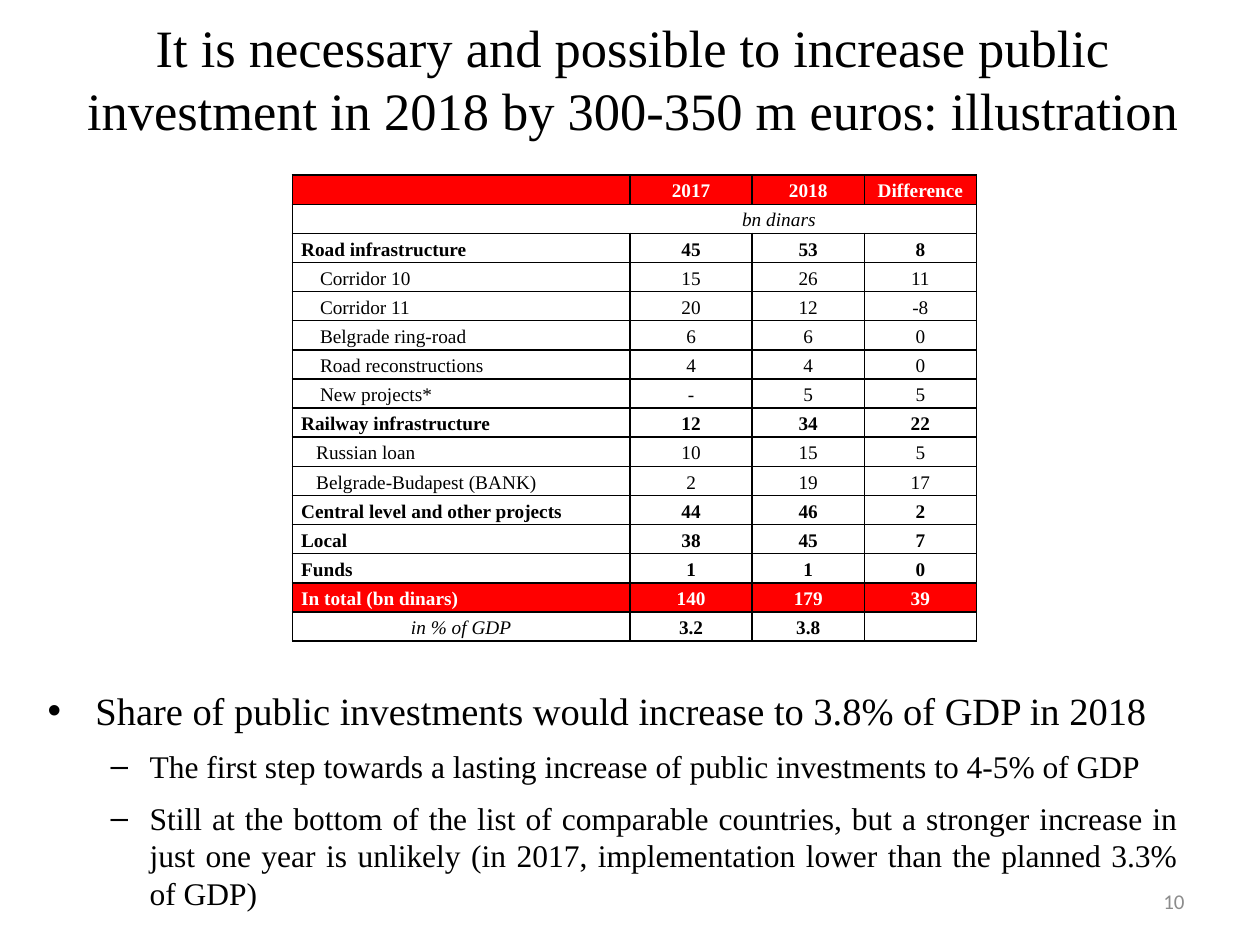
from dataclasses import dataclass

from lxml import etree
from pptx import Presentation
from pptx.dml.color import RGBColor
from pptx.enum.text import MSO_ANCHOR, MSO_AUTO_SIZE, PP_ALIGN
from pptx.oxml.ns import qn
from pptx.util import Inches, Pt

LEFT, CENTER, RIGHT, JUST = PP_ALIGN.LEFT, PP_ALIGN.CENTER, PP_ALIGN.RIGHT, PP_ALIGN.JUSTIFY
MIDDLE, TOP = MSO_ANCHOR.MIDDLE, MSO_ANCHOR.TOP
NO_FIT = MSO_AUTO_SIZE.NONE


@dataclass(frozen=True)
class Theme:
    serif: str = "Times New Roman"
    sans: str = "Calibri"
    ink: str = "000000"
    paper: str = "FFFFFF"
    accent: str = "FF0000"
    muted: str = "8C8C8C"
    title: int = 30
    lead: int = 22
    point: int = 18
    page: int = 12
    cell: int = 11


THEME = Theme()

COLS = [2.68, 0.97, 0.89, 0.89]
ROWS = [
    ("head", "", "2017", "2018", "Difference"),
    ("unit", "bn dinars", "", "", ""),
    ("group", "Road infrastructure", "45", "53", "8"),
    ("road", "Corridor 10", "15", "26", "11"),
    ("road", "Corridor 11", "20", "12", "-8"),
    ("road", "Belgrade ring-road", "6", "6", "0"),
    ("road", "Road reconstructions", "4", "4", "0"),
    ("road", "New projects*", "-", "5", "5"),
    ("group", "Railway infrastructure", "12", "34", "22"),
    ("rail", "Russian loan", "10", "15", "5"),
    ("rail", "Belgrade-Budapest (BANK)", "2", "19", "17"),
    ("group", "Central level and other projects", "44", "46", "2"),
    ("group", "Local", "38", "45", "7"),
    ("group", "Funds", "1", "1", "0"),
    ("head", "In total (bn dinars)", "140", "179", "39"),
    ("share", "in % of GDP", "3.2", "3.8", ""),
]
INDENT = {"unit": 3.5, "road": 0.15, "rail": 0.12}
POINTS = [
    (0, "Share of public investments would increase to 3.8% of GDP in 2018"),
    (1, "The first step towards a lasting increase of public investments to 4-5% of GDP"),
    (1, "Still at the bottom of the list of comparable countries, but a stronger increase in "
        "just one year is unlikely (in 2017, implementation lower than the planned 3.3% of GDP)"),
]
LEVELS = [("•", 0.38, -0.38, THEME.lead), ("–", 0.81, -0.31, THEME.point)]


def add_run(para, text, size, color=THEME.ink, face=THEME.serif, bold=False, italic=False):
    run = para.add_run()
    run.text = text
    font = run.font
    font.name, font.size, font.bold, font.italic = face, Pt(size), bold, italic
    font.color.rgb = RGBColor.from_string(color)


def set_frame(frame, anchor):
    frame.word_wrap = True
    frame.auto_size = NO_FIT
    frame.vertical_anchor = anchor
    return frame.paragraphs[0]


def set_indent(para, left, first=0):
    props = para._p.get_or_add_pPr()
    props.set("marL", str(Inches(left)))
    props.set("indent", str(Inches(first)))
    return props


def set_border(cell):
    props = cell._tc.get_or_add_tcPr()
    for spot, side in enumerate(("lnL", "lnR", "lnT", "lnB")):
        line = etree.Element(qn(f"a:{side}"), w=str(Pt(1)))
        fill = etree.SubElement(line, qn("a:solidFill"))
        etree.SubElement(fill, qn("a:srgbClr"), val=THEME.ink)
        props.insert(spot, line)


def fill_cell(cell, kind, col, text):
    head = kind == "head"
    cell.fill.solid()
    cell.fill.fore_color.rgb = RGBColor.from_string(THEME.accent if head else THEME.paper)
    set_border(cell)
    cell.margin_left = cell.margin_right = Inches(0.07)
    cell.margin_top = cell.margin_bottom = 0
    cell.vertical_anchor = MIDDLE
    para = cell.text_frame.paragraphs[0]
    para.line_spacing = 1.15
    para.alignment = CENTER if col or kind == "share" else LEFT
    if not text:
        etree.SubElement(para._p, qn("a:endParaRPr"), sz=str(THEME.cell * 100))
        return
    if col == 0 and kind in INDENT:
        set_indent(para, INDENT[kind])
    label = col == 0 and kind in ("unit", "share")
    bold = kind in ("head", "group", "share") and not label
    add_run(para, text, THEME.cell, THEME.paper if head else THEME.ink, bold=bold, italic=label)


def add_title(slide, x, y, w, h):
    title = slide.shapes.title
    title.left, title.top, title.width, title.height = map(Inches, (x, y, w, h))
    para = set_frame(title.text_frame, MIDDLE)
    para.alignment = CENTER
    add_run(para, "It is necessary and possible to increase public investment in 2018 "
                  "by 300-350 m euros: illustration", THEME.title)


def add_grid(slide, x, y, w, h):
    box = map(Inches, (x, y, w, h))
    grid = slide.shapes.add_table(len(ROWS), len(COLS), *box).table
    for col, part in zip(grid.columns, COLS):
        col.width = Inches(w * part / sum(COLS))
    for r, (kind, *texts) in enumerate(ROWS):
        grid.rows[r].height = Inches(h / len(ROWS))
        for c, text in enumerate(texts):
            fill_cell(grid.cell(r, c), kind, c, text)
        if kind == "unit":
            grid.cell(r, 0).merge(grid.cell(r, len(COLS) - 1))


def add_points(slide, x, y, w, h):
    frame = slide.shapes.add_textbox(*map(Inches, (x, y, w, h))).text_frame
    para = set_frame(frame, TOP)
    for i, (level, text) in enumerate(POINTS):
        if i:
            para = frame.add_paragraph()
        mark, left, first, size = LEVELS[level]
        para.level = level
        para.alignment = JUST
        para.space_before = para.space_after = Pt(4)
        props = set_indent(para, left, first)
        etree.SubElement(props, qn("a:buFont"), typeface="Arial")
        etree.SubElement(props, qn("a:buChar"), char=mark)
        add_run(para, text, size)


def add_page(slide, x, y, w, h):
    frame = slide.shapes.add_textbox(*map(Inches, (x, y, w, h))).text_frame
    para = set_frame(frame, MIDDLE)
    para.alignment = RIGHT
    add_run(para, "10", THEME.page, THEME.muted, THEME.sans)


def main():
    deck = Presentation()
    deck.slide_width, deck.slide_height = Inches(10), Inches(7.5)
    slide = deck.slides.add_slide(deck.slide_layouts[5])
    add_title(slide, 0.2, 0.16, 9.65, 0.92)
    add_page(slide, 7.17, 6.95, 2.33, 0.4)
    add_points(slide, 0.28, 5.4, 9.17, 1.89)
    add_grid(slide, 2.32, 1.39, 5.43, 3.7)
    deck.save("out.pptx")


if __name__ == "__main__":
    main()
